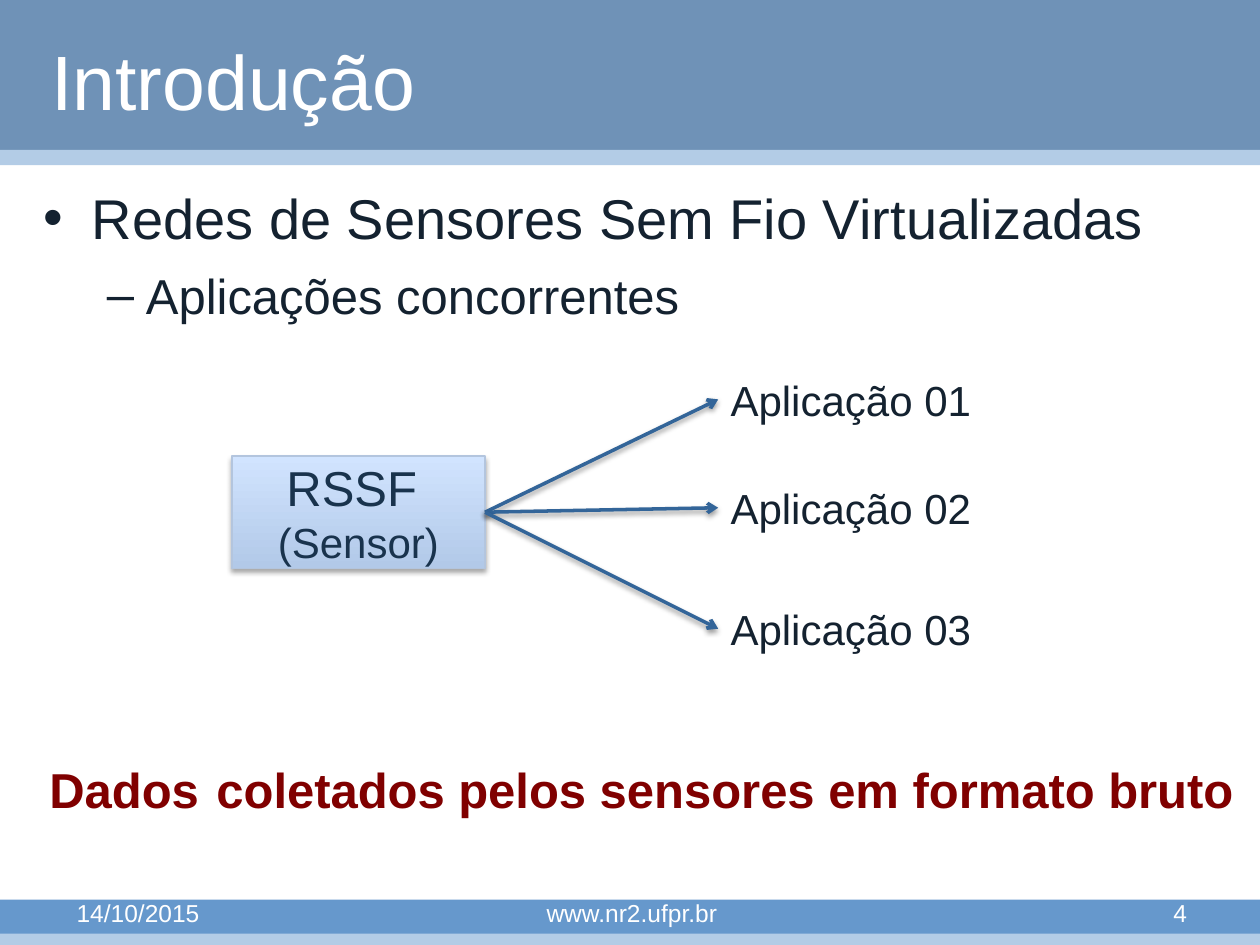
from dataclasses import dataclass

from lxml import etree
from pptx import Presentation
from pptx.dml.color import RGBColor
from pptx.enum.shapes import MSO_CONNECTOR, MSO_SHAPE
from pptx.enum.text import MSO_ANCHOR, MSO_AUTO_SIZE, PP_ALIGN
from pptx.oxml.ns import qn
from pptx.util import Inches, Pt

RECTANGLE = MSO_SHAPE.RECTANGLE
STRAIGHT = MSO_CONNECTOR.STRAIGHT
TOP, MIDDLE = MSO_ANCHOR.TOP, MSO_ANCHOR.MIDDLE
LEFT, CENTER, RIGHT = PP_ALIGN.LEFT, PP_ALIGN.CENTER, PP_ALIGN.RIGHT
SIDE_LEFT, SIDE_RIGHT = 1, 3

FONT = "Arial"
COLORS = {
    "header": "336599", "pale": "B3CCE6", "footer": "6698CC",
    "white": "FFFFFF", "ink": "142230", "alert": "800000",
    "box_text": "19334D", "box_line": "B3C5DE",
    "box_bottom": "B2C9E8", "box_top": "D1E4FF",
    "arrow": "336599", "shadow": "000000",
}


@dataclass
class Area:
    left: float
    top: float
    width: float
    height: float

    def lengths(self) -> list:
        return [Inches(n) for n in (self.left, self.top, self.width, self.height)]


@dataclass
class Band:
    area: Area
    color: str
    opacity: int = 100


@dataclass
class Footer:
    area: Area
    text: str
    align: PP_ALIGN


@dataclass
class Bullet:
    text: str
    size: int
    mark: str
    margin: float
    hanging: float
    level: int
    before: int


BANDS = [
    Band(Area(0, 0, 10, 1.31), "header", 70),
    Band(Area(0, 1.19, 10, 0.12), "pale"),
    Band(Area(0, 7.14, 10, 0.28), "footer"),
    Band(Area(0, 7.41, 10, 0.09), "pale"),
]
FOOTERS = [
    Footer(Area(0.51, 7.08, 2.34, 0.32), "14/10/2015", LEFT),
    Footer(Area(3.43, 7.08, 3.17, 0.35), "www.nr2.ufpr.br", CENTER),
    Footer(Area(7.18, 7.08, 2.34, 0.35), "4", RIGHT),
]
BULLETS = [
    Bullet("Redes de Sensores Sem Fio Virtualizadas", 32, "•", 0.38, 0.38, 0, 0),
    Bullet("Aplicações concorrentes", 28, "–", 0.81, 0.31, 1, 8),
]
APPLICATION_TOPS = [2.92, 3.78, 4.74]


def color(name: str) -> RGBColor:
    return RGBColor.from_string(COLORS[name])


def add_span(para, text: str, *, size: int, ink: str = "ink", bold: bool = False):
    span = para.add_run()
    span.text = text
    span.font.name = FONT
    span.font.size = Pt(size)
    span.font.bold = bold
    span.font.color.rgb = color(ink)


def add_text(page, area: Area, text: str = "", *, size: int = 24, ink: str = "ink",
             align=LEFT, anchor=TOP, wrap: bool = True):
    box = page.shapes.add_textbox(*area.lengths())
    frame = box.text_frame
    frame.word_wrap = wrap
    frame.vertical_anchor = anchor
    if not wrap:
        frame.auto_size = MSO_AUTO_SIZE.SHAPE_TO_FIT_TEXT
    frame.paragraphs[0].alignment = align
    if text:
        add_span(frame.paragraphs[0], text, size=size, ink=ink)
    return box


def add_band(page, band: Band):
    bar = page.shapes.add_shape(RECTANGLE, *band.area.lengths())
    bar.shadow.inherit = False
    bar.fill.solid()
    bar.fill.fore_color.rgb = color(band.color)
    bar.line.fill.background()
    if band.opacity < 100:
        tone = bar.fill._xPr.find(".//" + qn("a:srgbClr"))
        etree.SubElement(tone, qn("a:alpha"), val=str(band.opacity * 1000))


def add_shadow(shape, opacity: int, blur: float, distance: float):
    """Add a soft shadow straight below; call after the line is formatted."""
    effects = etree.SubElement(shape._element.spPr, qn("a:effectLst"))
    outer = etree.SubElement(
        effects, qn("a:outerShdw"), blurRad=str(Pt(blur)), dist=str(Pt(distance)),
        dir=str(90 * 60000), rotWithShape="0")
    tone = etree.SubElement(outer, qn("a:srgbClr"), val=COLORS["shadow"])
    etree.SubElement(tone, qn("a:alpha"), val=str(opacity * 1000))


def add_bullet(para, bullet: Bullet):
    para.level = bullet.level
    para.space_before = Pt(bullet.before)
    properties = para._p.get_or_add_pPr()
    properties.set("marL", str(Inches(bullet.margin)))
    properties.set("indent", str(-Inches(bullet.hanging)))
    etree.SubElement(properties, qn("a:buFont"), typeface=FONT)
    etree.SubElement(properties, qn("a:buChar"), char=bullet.mark)
    add_span(para, bullet.text, size=bullet.size)


def add_sensor(page):
    sensor = page.shapes.add_shape(RECTANGLE, *Area(1.84, 3.62, 2.01, 0.89).lengths())
    sensor.fill.gradient()
    sensor.fill.gradient_angle = 90
    for stop, name in zip(sensor.fill.gradient_stops, ("box_bottom", "box_top")):
        stop.color.rgb = color(name)
    sensor.line.color.rgb = color("box_line")
    sensor.line.width = Pt(0.75)
    add_shadow(sensor, 35, 3.1, 1.8)
    frame = sensor.text_frame
    frame.vertical_anchor = MIDDLE
    for para, text, size in ((frame.paragraphs[0], "RSSF ", 28),
                             (frame.add_paragraph(), "(Sensor)", 24)):
        para.alignment = CENTER
        add_span(para, text, size=size, ink="box_text")
    return sensor


def add_arrow(page, start, end):
    arrow = page.shapes.add_connector(STRAIGHT, 0, 0, 0, 0)
    arrow.begin_connect(start, SIDE_RIGHT)
    arrow.end_connect(end, SIDE_LEFT)
    arrow.line.color.rgb = color("arrow")
    arrow.line.width = Pt(2)
    etree.SubElement(arrow.line._get_or_add_ln(), qn("a:tailEnd"), type="arrow")
    add_shadow(arrow, 38, 3.1, 1.6)


def main():
    deck = Presentation()
    deck.slide_width, deck.slide_height = Inches(10), Inches(7.5)
    page = deck.slides.add_slide(deck.slide_layouts[6])

    # Header and footer bands
    for band in BANDS:
        add_band(page, band)
    add_text(page, Area(0.31, 0.24, 9.07, 0.79), "Introdução",
             size=44, ink="white", anchor=MIDDLE)
    for footer in FOOTERS:
        add_text(page, footer.area, footer.text, size=14, ink="white",
                 align=footer.align)

    # Bullets
    frame = add_text(page, Area(0.25, 1.41, 9.68, 1.25)).text_frame
    for index, bullet in enumerate(BULLETS):
        add_bullet(frame.add_paragraph() if index else frame.paragraphs[0], bullet)

    # Sensor feeding the applications
    sensor = add_sensor(page)
    for number, top in enumerate(APPLICATION_TOPS, start=1):
        label = add_text(page, Area(5.7, top, 2.13, 0.5),
                         f"Aplicação {number:02}", wrap=False)
        add_arrow(page, sensor, label)

    # Conclusion
    conclusion = add_text(page, Area(0.25, 5.87, 9.68, 0.68), align=CENTER)
    para = conclusion.text_frame.paragraphs[0]
    add_span(para, "Dados", size=28, ink="alert", bold=True)
    add_span(para, " ", size=36)
    add_span(para, "coletados pelos sensores em formato bruto",
             size=28, ink="alert", bold=True)

    deck.save("out.pptx")


if __name__ == "__main__":
    main()
